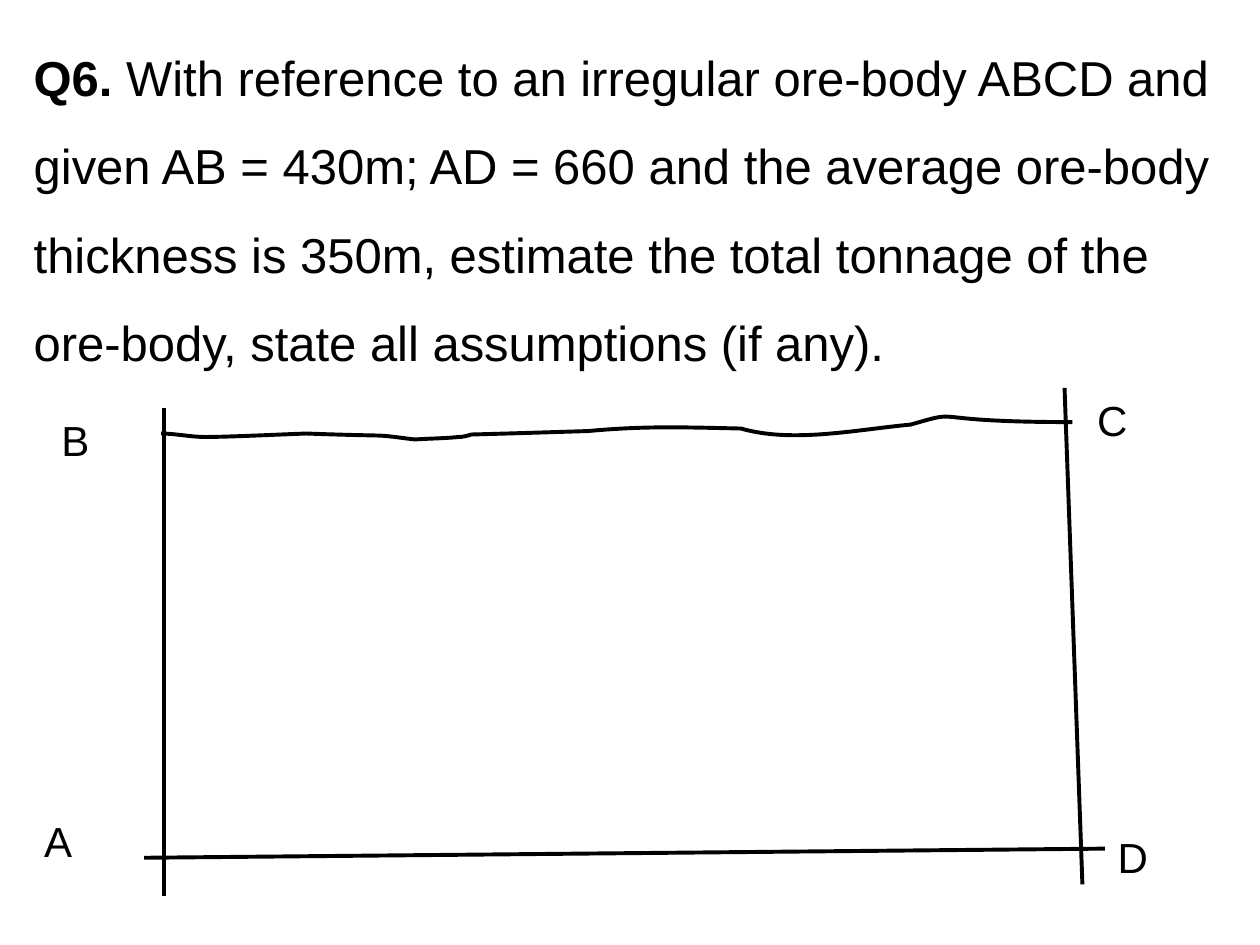
from lxml import etree
from pptx import Presentation
from pptx.dml.color import RGBColor
from pptx.enum.shapes import MSO_CONNECTOR, MSO_SHAPE
from pptx.enum.text import MSO_ANCHOR, PP_ALIGN
from pptx.oxml.ns import qn
from pptx.util import Cm, Pt

STRAIGHT = MSO_CONNECTOR.STRAIGHT
RECTANGLE = MSO_SHAPE.RECTANGLE
TOP, MIDDLE = MSO_ANCHOR.TOP, MSO_ANCHOR.MIDDLE
LEFT = PP_ALIGN.LEFT

COLOURS = {"ink": "000000", "paper": "FFFFFF"}
QUESTION_FONT = {"name": "Arial", "size": Pt(28)}
LABEL_FONT = {"name": "Arial", "size": Pt(24)}
LINE_WIDTH = Pt(2.25)

QUESTION = [
    ("Q6.", True),
    (" With reference to an irregular ore-body ABCD and given AB = 430m; "
     "AD = 660 and the average ore-body thickness is 350m, estimate the "
     "total tonnage of the ore-body, state all assumptions (if any).", False),
]
BOUNDARIES = [
    (3.3, 8.23, 3.3, 18.06),
    (2.03, 17.3, 24.1, 17.09),
    (21.46, 7.82, 21.82, 17.83),
]
CORNERS = [
    ("A", 0.64, 16.31, 2.26),
    ("B", 0.99, 8.23, 1.85),
    ("D", 22.28, 16.64, 2.26),
    ("C", 21.87, 7.82, 1.6),
]
CORNER_HEIGHT = 2.21
SURFACE_START = (3.25, 8.74)
SURFACE_CURVES = [
    [(3.53, 8.74), (3.84, 8.81), (4.14, 8.81)],
    [(4.57, 8.81), (5.64, 8.76), (6.17, 8.74)],
    [(8.1, 8.81), (7.39, 8.74), (8.36, 8.86)],
    [(8.66, 8.84), (8.94, 8.84), (9.25, 8.81)],
    [(9.32, 8.81), (9.42, 8.79), (9.5, 8.76)],
    [(10.29, 8.74), (11.86, 8.69), (11.86, 8.69)],
    [(12.95, 8.59), (13.67, 8.61), (14.94, 8.64)],
    [(15.98, 8.94), (17.27, 8.66), (18.36, 8.56)],
    [(19.51, 8.23), (18.47, 8.51), (21.62, 8.51)],
]


def colour(name):
    return RGBColor.from_string(COLOURS[name])


def add_span(para, text, font, bold=False):
    span = para.add_run()
    span.text = text
    for key, value in {**font, "bold": bold}.items():
        setattr(span.font, key, value)
    span.font.color.rgb = colour("ink")


def add_question(page):
    box = page.shapes.add_textbox(Cm(0.43), Cm(0.43), Cm(24.56), Cm(6.99))
    box.text_frame.word_wrap = True
    box.text_frame.vertical_anchor = MIDDLE
    para = box.text_frame.paragraphs[0]
    para.line_spacing = 1.5
    for text, bold in QUESTION:
        add_span(para, text, QUESTION_FONT, bold)


def style_line(line):
    line.color.rgb = colour("ink")
    line.width = LINE_WIDTH


def add_boundary(group, ends):
    boundary = group.shapes.add_connector(STRAIGHT, *map(Cm, ends))
    style_line(boundary.line)
    etree.SubElement(boundary.element.spPr, qn("a:effectLst"))


def add_corner(group, letter, left, top, width):
    corner = group.shapes.add_shape(
        RECTANGLE, Cm(left), Cm(top), Cm(width), Cm(CORNER_HEIGHT))
    corner.shadow.inherit = False
    corner.fill.solid()
    corner.fill.fore_color.rgb = colour("paper")
    corner.line.fill.background()
    corner.text_frame.word_wrap = True
    corner.text_frame.vertical_anchor = TOP
    para = corner.text_frame.paragraphs[0]
    para.alignment = LEFT
    add_span(para, letter, LABEL_FONT)


def add_surface(group):
    builder = group.shapes.build_freeform(*map(Cm, SURFACE_START))
    points = [(Cm(x), Cm(y)) for curve in SURFACE_CURVES for x, y in curve]
    builder.add_line_segments(points, close=False)
    surface = builder.convert_to_shape()
    surface.shadow.inherit = False
    surface.fill.background()
    style_line(surface.line)
    segments = list(surface.element.iter(qn("a:lnTo")))
    for first in range(0, len(segments), 3):
        segments[first].tag = qn("a:cubicBezTo")
        for segment in segments[first + 1:first + 3]:
            segments[first].append(segment[0])
            segment.getparent().remove(segment)


def main():
    deck = Presentation()
    deck.slide_width, deck.slide_height = Cm(25.4), Cm(19.05)
    page = deck.slides.add_slide(deck.slide_layouts[6])
    add_question(page)
    ore_body = page.shapes.add_group_shape()
    for ends in BOUNDARIES:
        add_boundary(ore_body, ends)
    for corner in CORNERS:
        add_corner(ore_body, *corner)
    add_surface(ore_body)
    deck.save("out.pptx")


if __name__ == "__main__":
    main()
